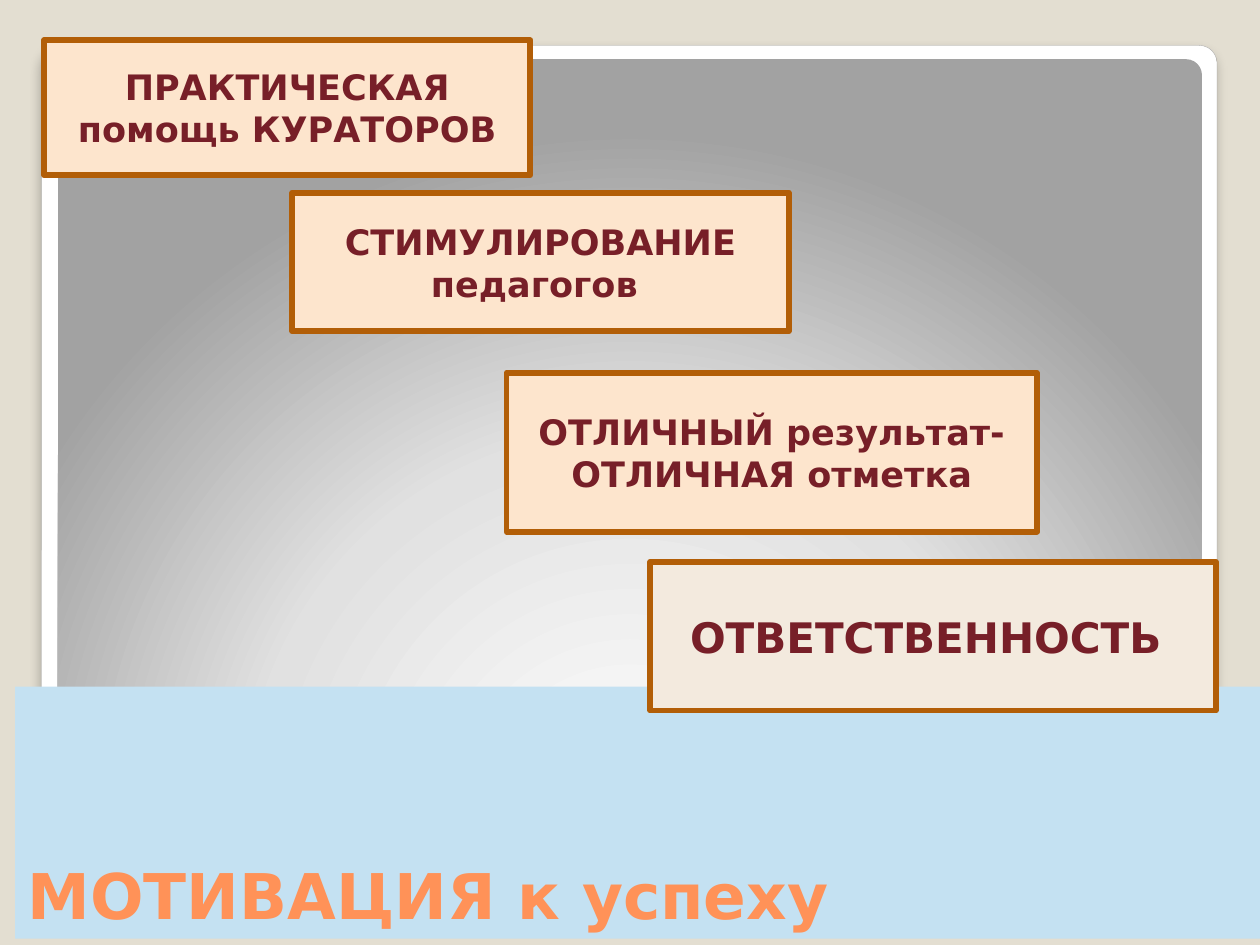
from dataclasses import dataclass

from pptx import Presentation
from pptx.dml.color import RGBColor
from pptx.enum.shapes import MSO_SHAPE
from pptx.enum.text import MSO_ANCHOR, PP_ALIGN
from pptx.oxml import parse_xml
from pptx.oxml.ns import nsdecls
from pptx.util import Inches, Pt

RECTANGLE = MSO_SHAPE.RECTANGLE
ROUNDED = MSO_SHAPE.ROUNDED_RECTANGLE
MIDDLE, BOTTOM = MSO_ANCHOR.MIDDLE, MSO_ANCHOR.BOTTOM
LEFT, CENTER = PP_ALIGN.LEFT, PP_ALIGN.CENTER


@dataclass(frozen=True)
class Theme:
    font: str = "DejaVu Sans"
    background: str = "E3DED1"
    frame_line: str = "A4A4A4"
    band: str = "C4E1F2"
    title: str = "FF9258"
    step: str = "FDE5CD"
    last_step: str = "F3EADE"
    step_line: str = "B25E07"
    step_text: str = "771F28"
    frame_stops: tuple = ((0, "FFFFFF"), (98, "FFFFFF"), (99, "F7F7F7"), (100, "DADADA"))
    panel_stops: tuple = ((0, "FFFFFF"), (55, "E1E1E1"), (100, "A2A2A2"))
    title_size: int = 36
    step_size: int = 20
    last_step_size: int = 24


def write_text(shape, text, *, font, size, color, align=CENTER, anchor=MIDDLE):
    frame = shape.text_frame
    frame.word_wrap = True
    frame.vertical_anchor = anchor
    para = frame.paragraphs[0]
    para.alignment = align
    span = para.add_run()
    span.text = text
    span.font.name = font
    span.font.size = Pt(size)
    span.font.bold = True
    span.font.color.rgb = RGBColor.from_string(color)


class SlideBuilder:
    def __init__(self, page, theme):
        self.page = page
        self.theme = theme

    def background(self):
        fill = self.page.background.fill
        fill.solid()
        fill.fore_color.rgb = RGBColor.from_string(self.theme.background)

    def box(self, place, fill=None, line=None, line_width=0, kind=RECTANGLE):
        shape = self.page.shapes.add_shape(kind, *map(Inches, place))
        shape.shadow.inherit = False
        if fill:
            shape.fill.solid()
            shape.fill.fore_color.rgb = RGBColor.from_string(fill)
        else:
            shape.fill.background()
        if line:
            shape.line.color.rgb = RGBColor.from_string(line)
            shape.line.width = Pt(line_width)
        else:
            shape.line.fill.background()
        return shape

    def gradient_box(self, place, stops, direction, **line):
        shape = self.box(place, kind=ROUNDED, **line)
        shape.adjustments[0] = 0.021
        stop_list = "".join(
            f'<a:gs pos="{position * 1000}"><a:srgbClr val="{color}"/></a:gs>'
            for position, color in stops
        )
        gradient = parse_xml(
            f'<a:gradFill {nsdecls("a")} rotWithShape="1">'
            f"<a:gsLst>{stop_list}</a:gsLst>{direction}</a:gradFill>"
        )
        properties = shape.element.spPr
        properties.replace(properties.find("{*}noFill"), gradient)
        return shape

    def soft_shadow(self, shape):
        effects = shape.element.spPr.find("{*}effectLst")
        effects.append(parse_xml(
            f'<a:outerShdw {nsdecls("a")} blurRad="{Pt(6)}" dist="{Pt(4)}" '
            'dir="5400000" algn="t" rotWithShape="0">'
            '<a:srgbClr val="000000"><a:alpha val="25000"/></a:srgbClr></a:outerShdw>'
        ))

    def title(self, place, text):
        theme = self.theme
        write_text(self.box(place, theme.band), text, font=theme.font,
                   size=theme.title_size, color=theme.title, align=LEFT, anchor=BOTTOM)

    def step(self, place, text, fill, size):
        theme = self.theme
        shape = self.box(place, fill, theme.step_line, 3.35)
        write_text(shape, text, font=theme.font, size=size, color=theme.step_text)


def main():
    deck = Presentation()
    deck.slide_width, deck.slide_height = Inches(10), Inches(7.5)
    theme = Theme()
    builder = SlideBuilder(deck.slides.add_slide(deck.slide_layouts[6]), theme)

    # Framed backdrop
    builder.background()
    frame = builder.gradient_box(
        (0.33, 0.36, 9.33, 6.78), theme.frame_stops,
        '<a:lin ang="5400000" scaled="0"/>', line=theme.frame_line, line_width=0.16)
    builder.soft_shadow(frame)
    builder.gradient_box(
        (0.46, 0.47, 9.08, 6), theme.panel_stops,
        '<a:path path="circle">'
        '<a:fillToRect l="50000" t="175000" r="50000" b="-75000"/></a:path>')

    # Title band
    builder.title((0.12, 5.45, 9.88, 2), "МОТИВАЦИЯ к успеху")

    # Descending steps
    steps = (
        ((0.35, 0.32, 3.86, 1.07), "ПРАКТИЧЕСКАЯ помощь КУРАТОРОВ"),
        ((2.32, 1.53, 3.94, 1.1), "СТИМУЛИРОВАНИЕ педагогов "),
        ((4.02, 2.96, 4.21, 1.26), "ОТЛИЧНЫЙ результат- ОТЛИЧНАЯ отметка"),
    )
    for place, text in steps:
        builder.step(place, text, theme.step, theme.step_size)
    builder.step((5.16, 4.46, 4.49, 1.18), "ОТВЕТСТВЕННОСТЬ ",
                 theme.last_step, theme.last_step_size)

    deck.save("out.pptx")


if __name__ == "__main__":
    main()
